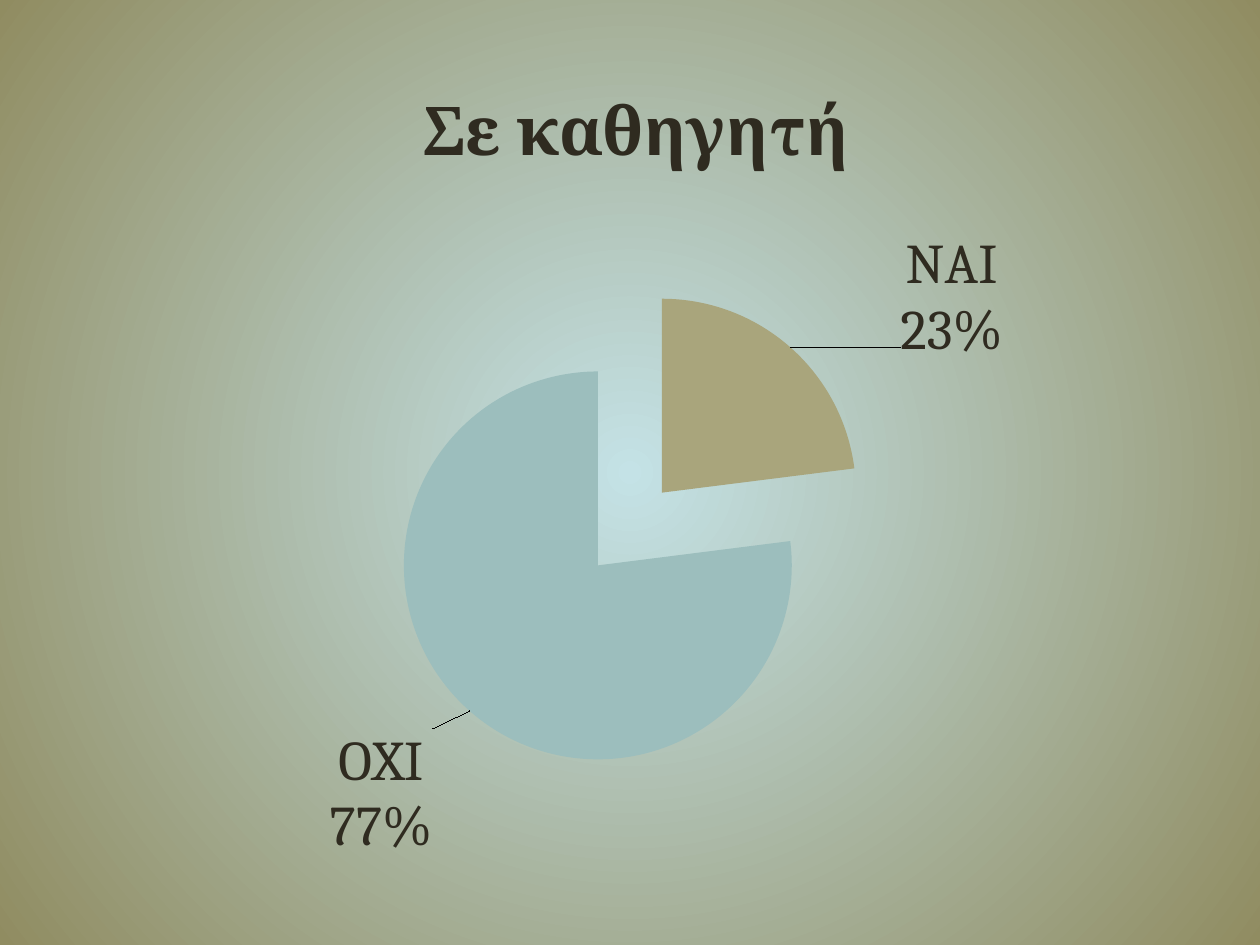
from lxml import etree
from pptx import Presentation
from pptx import util as u
from pptx.chart.data import CategoryChartData
from pptx.dml.color import RGBColor
from pptx.enum import chart as ch
from pptx.oxml.ns import qn

THEME = {
    "center": "C4E2E6", "edge": "908C61", "text": "2F2B20",
    "slices": ["A9A57C", "9CBEBD"],
    "font": "Cambria", "title_size": 38.4, "label_size": 32,
}
EXPLOSION = 25
# Percent of the chart's width and height
TITLE_PLACE = {"x": 33, "y": 2.2}
PIE_FRAME = {"x": 31, "y": 27.7, "w": 38, "h": 58.4}
LABEL_SHIFTS = [{"x": 8.2, "y": 2.7}, {"x": -2.5, "y": 1.5}]


def style_font(font, **values):
    values = {"name": THEME["font"], "bold": False, **values}
    for name, value in values.items():
        setattr(font, name, value)
    font.color.rgb = RGBColor.from_string(THEME["text"])


def manual_layout(percents, **modes):
    """Return a c:layout element holding modes and percents of the chart's size."""
    layout = etree.Element(qn("c:layout"))
    manual = etree.SubElement(layout, qn("c:manualLayout"))
    shares = {name: percent / 100 for name, percent in percents.items()}
    for name, value in {**modes, **shares}.items():
        etree.SubElement(manual, qn(f"c:{name}"), val=str(value))
    return layout


presentation = Presentation()
presentation.slide_width, presentation.slide_height = u.Inches(10), u.Inches(7.5)
slide = presentation.slides.add_slide(presentation.slide_layouts[6])

# Radial background
fill = slide.background.fill
fill.gradient()
for stop, name in zip(fill.gradient_stops, ("center", "edge")):
    stop.color.rgb = RGBColor.from_string(THEME[name])
gradient = slide.element.find(".//" + qn("a:gradFill"))
circle = etree.Element(qn("a:path"), path="circle")
etree.SubElement(circle, qn("a:fillToRect"), l="50000", t="50000", r="50000", b="50000")
gradient.replace(gradient.find(qn("a:lin")), circle)

# Pie chart
data = CategoryChartData()
data.categories = ["NAI", "OXI"]
data.add_series("Series 1", (23, 77))
frame = slide.shapes.add_chart(
    ch.XL_CHART_TYPE.PIE, u.Inches(-0.09), u.Inches(0.45), u.Inches(10.18), u.Inches(6.59), data)
chart = frame.chart
chart.has_legend = False
style_font(chart.font, name="Roboto", size=u.Pt(THEME["label_size"]))

chart.has_title = True
title = chart.chart_title.text_frame
title.text = "Σε καθηγητή"
style_font(title.paragraphs[0].runs[0].font, size=u.Pt(THEME["title_size"]), bold=True)

title_element = chart.element.find(".//" + qn("c:title"))
plot_area = chart.element.find(".//" + qn("c:plotArea"))
for parent in (title_element, plot_area):
    for layout in parent.findall(qn("c:layout")):
        parent.remove(layout)
title_element.find(qn("c:tx")).addnext(
    manual_layout(TITLE_PLACE, xMode="edge", yMode="edge"))
plot_area.insert(0, manual_layout(
    PIE_FRAME, layoutTarget="inner", xMode="edge", yMode="edge"))

plot = chart.plots[0]
plot.vary_by_categories = True
series = plot.series[0]
labels = series.data_labels
formats = {
    "show_value": False, "show_category_name": True, "show_percentage": True,
    "number_format": "0%", "number_format_is_linked": False,
    "position": ch.XL_LABEL_POSITION.OUTSIDE_END,
}
for name, value in formats.items():
    setattr(labels, name, value)
style_font(labels.font, size=u.Pt(THEME["label_size"]))

for index, color in enumerate(THEME["slices"]):
    point = series.points[index]
    point.format.fill.solid()
    point.format.fill.fore_color.rgb = RGBColor.from_string(color)
    point.format.line.fill.background()
    style_font(point.data_label.font, size=u.Pt(THEME["label_size"]))
    point.data_label.position = ch.XL_LABEL_POSITION.OUTSIDE_END

explosion = etree.Element(qn("c:explosion"), val=str(EXPLOSION))
chart.element.find(".//" + qn("c:dPt")).addprevious(explosion)

# Category and percentage on two lines, moved away from the slices
for label, shift in zip(chart.element.iter(qn("c:dLbl")), LABEL_SHIFTS):
    label.find(qn("c:idx")).addnext(manual_layout(shift))
    for name, value in {"showVal": "0", "showCatName": "1", "showPercent": "1"}.items():
        label.find(qn(f"c:{name}")).set("val", value)
for bubble_flag in list(chart.element.iter(qn("c:showBubbleSize"))):
    separator = etree.Element(qn("c:separator"))
    separator.text = "\n"
    bubble_flag.addnext(separator)

presentation.save("out.pptx")
